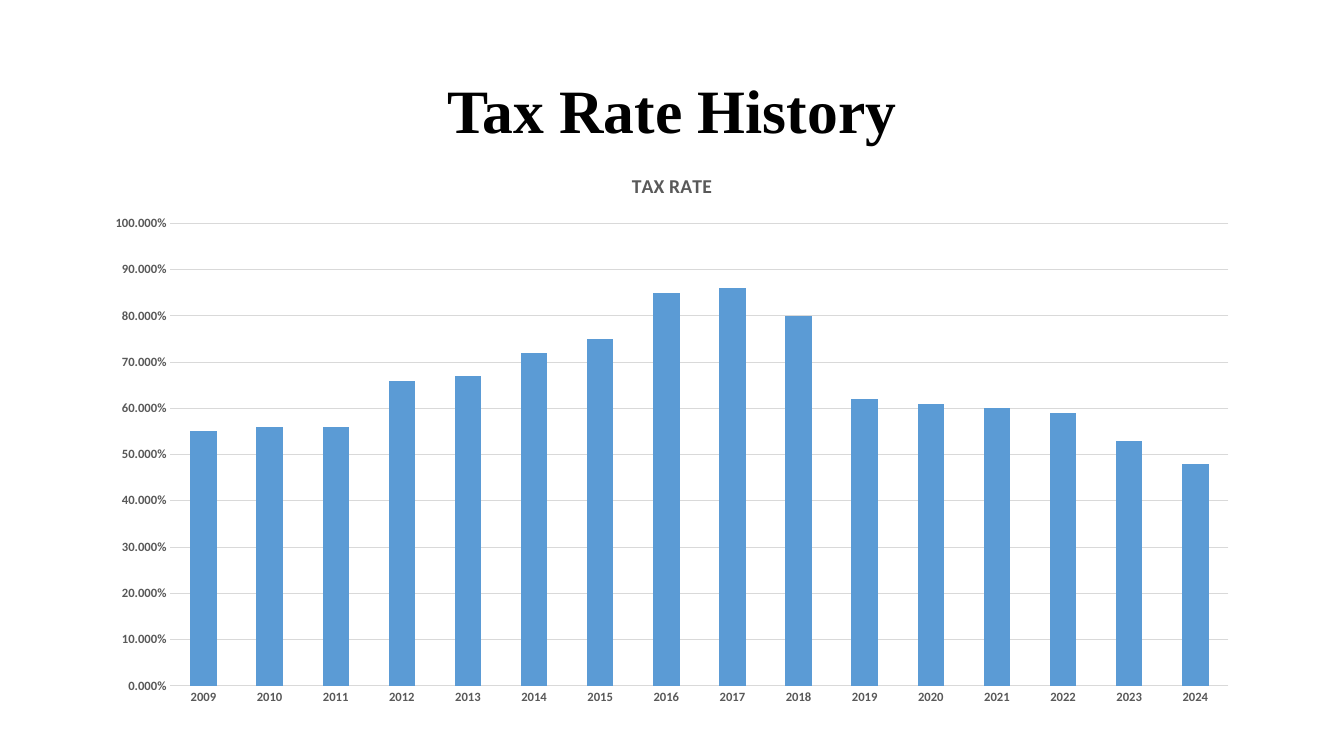
from pptx import Presentation
from pptx.chart.data import CategoryChartData
from pptx.dml.color import RGBColor
from pptx.enum.chart import XL_CHART_TYPE, XL_TICK_MARK
from pptx.enum.text import MSO_ANCHOR, PP_ALIGN
from pptx.util import Pt

COLUMNS = XL_CHART_TYPE.COLUMN_CLUSTERED
NO_TICK = XL_TICK_MARK.NONE
CENTER = PP_ALIGN.CENTER
MIDDLE = MSO_ANCHOR.MIDDLE

BLACK = RGBColor(0x00, 0x00, 0x00)
GRAY = RGBColor(0x59, 0x59, 0x59)
GRID = RGBColor(0xD9, 0xD9, 0xD9)
BLUE = RGBColor(0x5B, 0x9B, 0xD5)

YEARS = range(2009, 2025)
RATES = [0.55, 0.56, 0.56, 0.66, 0.67, 0.72, 0.75, 0.85,
         0.86, 0.8, 0.62, 0.61, 0.6, 0.59, 0.53, 0.48]


def style_font(font, size, color=GRAY, name="Calibri", bold=True):
    font.size = Pt(size)
    font.bold = bold
    font.name = name
    font.color.rgb = color


def write_text(tf, text, align=CENTER, spacing=None, **font_format):
    p = tf.paragraphs[0]
    p.alignment = align
    p.line_spacing = spacing
    r = p.add_run()
    r.text = text
    style_font(r.font, **font_format)


def add_title(s, left, top, width, height):
    sp = s.shapes.title
    sp.left, sp.top, sp.width, sp.height = Pt(left), Pt(top), Pt(width), Pt(height)
    tf = sp.text_frame
    tf.word_wrap = True
    tf.vertical_anchor = MIDDLE
    write_text(tf, "Tax Rate History", spacing=0.9, size=44, color=BLACK,
               name="Times New Roman")


def style_axis(axis):
    axis.major_tick_mark = axis.minor_tick_mark = NO_TICK
    axis.format.line.fill.background()
    style_font(axis.tick_labels.font, 9)


def add_rate_chart(s, left, top, width, height):
    data = CategoryChartData(number_format="0.000%")
    data.categories = [str(year) for year in YEARS]
    data.add_series("TAX RATE", RATES)
    chart = s.shapes.add_chart(COLUMNS, Pt(left), Pt(top), Pt(width),
                               Pt(height), data).chart
    style_font(chart.font, 10, BLACK)
    chart.has_legend = False
    chart.has_title = True
    write_text(chart.chart_title.text_frame, "TAX RATE", size=14)

    plot = chart.plots[0]
    plot.gap_width = 150
    plot.vary_by_categories = False
    fill = plot.series[0].format.fill
    fill.solid()
    fill.fore_color.rgb = BLUE

    style_axis(chart.category_axis)
    axis = chart.value_axis
    style_axis(axis)
    axis.minimum_scale, axis.maximum_scale, axis.major_unit = 0, 1, 0.1
    axis.tick_labels.number_format = "0.000%"
    axis.tick_labels.number_format_is_linked = False
    axis.has_major_gridlines = True
    line = axis.major_gridlines.format.line
    line.color.rgb = GRID
    line.width = Pt(0.75)


def main():
    prs = Presentation()
    prs.slide_width, prs.slide_height = Pt(960), Pt(540)
    s = prs.slides.add_slide(prs.slide_layouts[5])
    add_title(s, 66, 28.75, 828, 104.4)
    add_rate_chart(s, 66, 108.75, 828, 402.5)
    prs.save("out.pptx")


if __name__ == "__main__":
    main()
